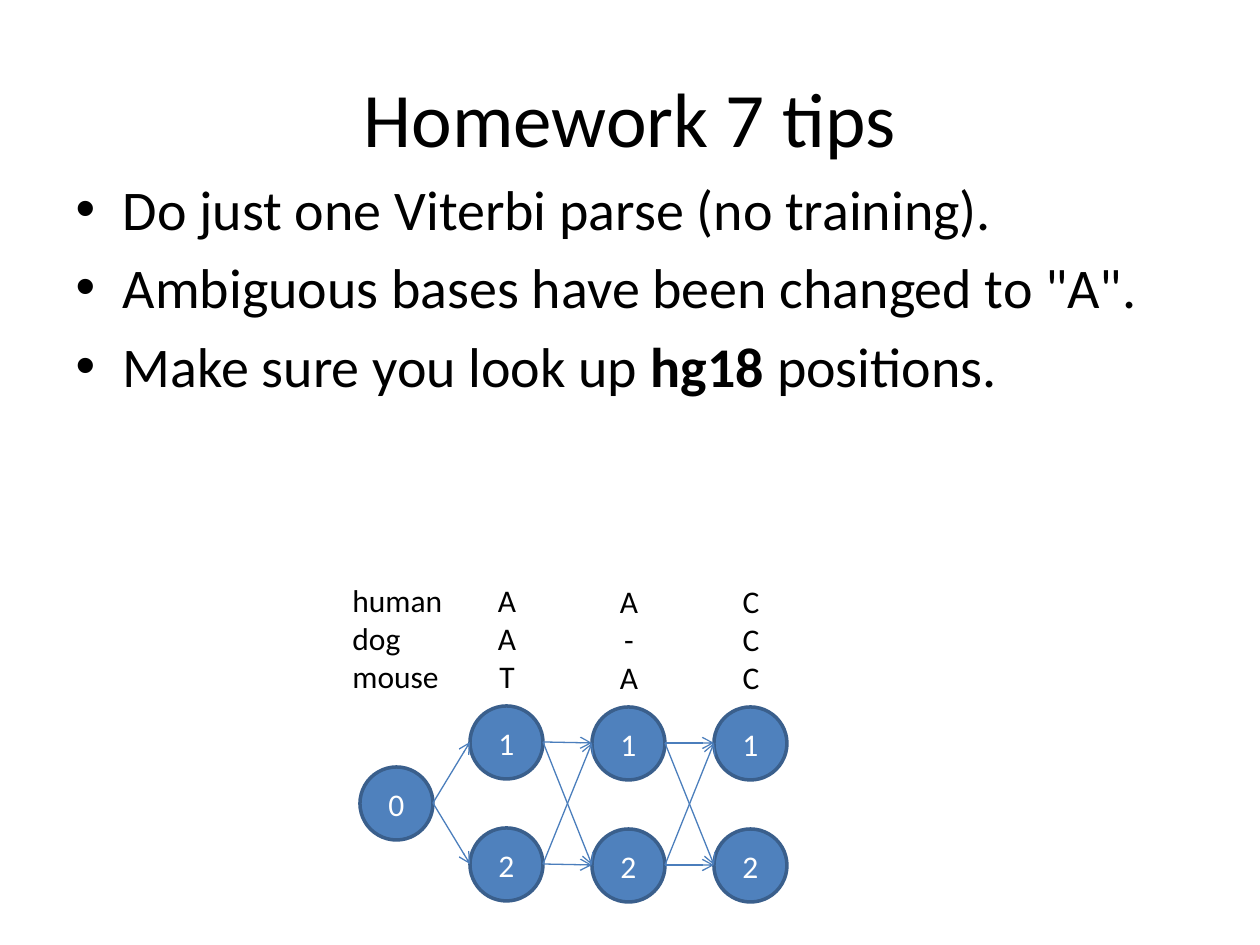
from dataclasses import dataclass
from itertools import pairwise, product

from lxml import etree
from pptx import Presentation
from pptx import util as u
from pptx.dml.color import RGBColor
from pptx.enum import shapes, text
from pptx.oxml.ns import qn

PX = 914400 / 126  # EMU in one px
DIAMETER = 73
STEP = 122  # from one state or alignment column to the next


@dataclass(frozen=True)
class Theme:
    font: str = "Calibri"
    ink: str = "000000"
    state_text: str = "FFFFFF"
    state_fill: str = "4F81BD"
    state_line: str = "3A5F8C"
    arrow: str = "4B7EBC"
    title_size: int = 44
    body_size: int = 32
    label_size: int = 18


@dataclass(frozen=True)
class State:
    label: str
    left: int
    top: int

    @property
    def entry(self) -> tuple[int, int]:
        return self.left, self.top + DIAMETER // 2

    @property
    def exit(self) -> tuple[int, int]:
        return self.left + DIAMETER, self.top + DIAMETER // 2


@dataclass(frozen=True)
class Column:
    bases: str
    left: int
    top: int

    @property
    def states(self) -> list[State]:
        return [State(str(row + 1), self.left, self.top + row * STEP) for row in range(2)]


THEME = Theme()
TIPS = [
    ["Do just one Viterbi parse (no training)."],
    ['Ambiguous bases have been changed to "A".'],
    ["Make sure you look up ", "*hg18 ", "positions."],
]
START = State("0", 360, 767)
COLUMNS = [Column("AAT", 470, 706), Column("A-A", 470 + STEP, 707),
           Column("CCC", 470 + 2 * STEP, 707)]


def px(*lengths: int) -> list[u.Emu]:
    return [u.Emu(round(length * PX)) for length in lengths]


def write(frame, paragraphs, *, size: int, color: str = THEME.ink, align=None) -> None:
    """Fill a text frame; each paragraph is a sequence of runs, and a leading * means bold."""
    frame.word_wrap = True
    for index, runs in enumerate(paragraphs):
        paragraph = frame.add_paragraph() if index else frame.paragraphs[0]
        if align is not None:
            paragraph.alignment = align
        for words in runs:
            run = paragraph.add_run()
            run.text = words.removeprefix("*")
            run.font.name = THEME.font
            run.font.size = u.Pt(size)
            run.font.color.rgb = RGBColor.from_string(color)
            if words.startswith("*"):
                run.font.bold = True


def place(shape, left: int, top: int, width: int, height: int) -> None:
    shape.left, shape.top, shape.width, shape.height = px(left, top, width, height)


def draw_labels(slide, lines, left: int, top: int, width: int, align) -> None:
    box = slide.shapes.add_textbox(*px(left, top, width, 149))
    write(box.text_frame, [[line] for line in lines], size=THEME.label_size, align=align)


def draw_state(slide, state: State) -> None:
    shape = slide.shapes.add_shape(
        shapes.MSO_SHAPE.OVAL, *px(state.left, state.top, DIAMETER, DIAMETER))
    shape.shadow.inherit = False
    shape.fill.solid()
    shape.fill.fore_color.rgb = RGBColor.from_string(THEME.state_fill)
    shape.line.color.rgb = RGBColor.from_string(THEME.state_line)
    shape.line.width = u.Pt(2)
    shape.text_frame.vertical_anchor = text.MSO_ANCHOR.MIDDLE
    write(shape.text_frame, [[state.label]], size=THEME.label_size,
          color=THEME.state_text, align=text.PP_ALIGN.CENTER)


def draw_arrow(slide, source: State, target: State) -> None:
    arrow = slide.shapes.add_connector(
        shapes.MSO_CONNECTOR.STRAIGHT, *px(*source.exit, *target.entry))
    arrow.line.color.rgb = RGBColor.from_string(THEME.arrow)
    arrow.line.width = u.Pt(0.75)
    etree.SubElement(arrow.line._get_or_add_ln(), qn("a:tailEnd"), type="arrow")
    etree.SubElement(arrow._element.spPr, qn("a:effectLst"))


def main() -> None:
    presentation = Presentation()
    presentation.slide_width, presentation.slide_height = px(1260, 945)
    slide = presentation.slides.add_slide(presentation.slide_layouts[1])

    # Title and tips
    title, body = slide.placeholders
    place(title, 63, 38, 1134, 158)
    title.text_frame.vertical_anchor = text.MSO_ANCHOR.MIDDLE
    write(title.text_frame, [["Homework 7 tips"]], size=THEME.title_size,
          align=text.PP_ALIGN.CENTER)
    place(body, 63, 168, 1134, 624)
    write(body.text_frame, TIPS, size=THEME.body_size)

    # Alignment columns with their states
    draw_labels(slide, ["human", "dog", "mouse"], 340, 575, 146, text.PP_ALIGN.LEFT)
    for column in COLUMNS:
        draw_labels(slide, column.bases, column.left + 6, column.top - 131, 62,
                    text.PP_ALIGN.CENTER)
        for state in column.states:
            draw_state(slide, state)
    draw_state(slide, START)

    # Transitions: every state leads to every state of the next column
    layers = [[START], *(column.states for column in COLUMNS)]
    for sources, targets in pairwise(layers):
        for source, target in product(sources, targets):
            draw_arrow(slide, source, target)

    presentation.save("out.pptx")


if __name__ == "__main__":
    main()
